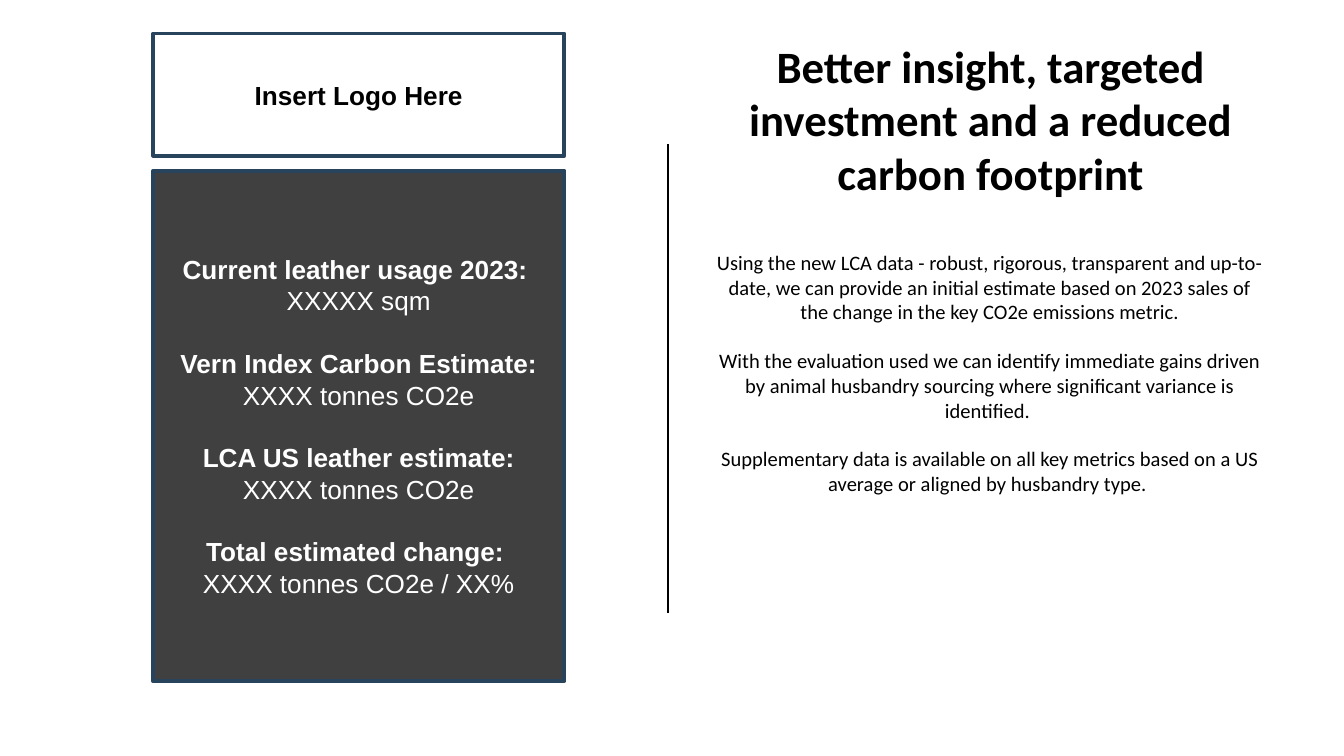
from lxml.etree import SubElement
from pptx import Presentation
from pptx.dml.color import RGBColor
from pptx.enum.shapes import MSO_CONNECTOR, MSO_SHAPE
from pptx.enum.text import MSO_ANCHOR, PP_ALIGN
from pptx.oxml.ns import qn
from pptx.util import Inches, Pt

TITLE = "Better insight, targeted investment and a reduced carbon footprint"
BODY = [
    "Using the new LCA data - robust, rigorous, transparent and up-to-date, we can provide an initial "
    "estimate based on 2023 sales of the change in the key CO2e emissions metric.",
    "With the evaluation used we can identify immediate gains driven by animal husbandry sourcing "
    "where significant variance is identified. ",
    "Supplementary data is available on all key metrics based on a US average or aligned by husbandry type. ",
]
LOGO_LABEL = "Insert Logo Here"
METRICS = [
    ("Current leather usage 2023: ", "XXXXX sqm"),
    ("Vern Index Carbon Estimate:", "XXXX tonnes CO2e"),
    ("LCA US leather estimate:", "XXXX tonnes CO2e"),
    ("Total estimated change: ", "XXXX tonnes CO2e / XX%"),
]
COLORS = {"ink": "000000", "paper": "FFFFFF", "panel": "404040", "border": "28445D"}

SLIDE_W = 10
SLIDE_H = SLIDE_W * 9 / 16
PANEL_X, PANEL_W = 1.14, 3.06
LOGO_Y, LOGO_H = 0.25, 0.91
PANEL_Y, PANEL_H = LOGO_Y + LOGO_H + 0.11, 3.8
DIVIDER_X = 4.97


def color(name):
    return RGBColor.from_string(COLORS[name])


def write(s, lines, font, ink):
    tf = s.text_frame
    tf.word_wrap = True
    tf.vertical_anchor = MSO_ANCHOR.MIDDLE
    for i, (text, size, bold, gap) in enumerate(lines):
        p = tf.paragraphs[0] if i == 0 else tf.add_paragraph()
        p.text = text
        p.alignment = PP_ALIGN.CENTER
        if i and gap:
            p.space_before = Pt(gap)
        p.font.name, p.font.size, p.font.bold = font, Pt(size), bold
        p.font.color.rgb = color(ink)


def add_text(x, y, w, h, lines):
    s = slide.shapes.add_textbox(Inches(x), Inches(y), Inches(w), Inches(h))
    tf = s.text_frame
    tf.margin_left = tf.margin_right = Inches(0.07)
    tf.margin_top = tf.margin_bottom = Inches(0.04)
    write(s, lines, "Calibri", "ink")


def add_panel(y, h, fill, ink, lines):
    s = slide.shapes.add_shape(
        MSO_SHAPE.RECTANGLE, Inches(PANEL_X), Inches(y), Inches(PANEL_W), Inches(h))
    s.shadow.inherit = False
    s.fill.solid()
    s.fill.fore_color.rgb = color(fill)
    s.line.color.rgb = color("border")
    s.line.width = Pt(2)
    write(s, lines, "Arial", ink)


prs = Presentation()
prs.slide_width, prs.slide_height = Inches(SLIDE_W), Inches(SLIDE_H)
slide = prs.slides.add_slide(prs.slide_layouts[6])

divider = slide.shapes.add_connector(
    MSO_CONNECTOR.STRAIGHT, Inches(DIVIDER_X), Inches(1.07), Inches(DIVIDER_X), Inches(4.56))
divider.line.color.rgb = color("ink")
divider.line.width = Pt(0.75)
SubElement(divider._element.spPr, qn("a:effectLst"))

add_text(5.24, 1.81, 4.25, 1.93, [(text, 11, False, 13) for text in BODY])
add_text(5.03, 0.24, 4.68, 1.29, [(TITLE, 24, True, 0)])

metric_lines = [line for label, value in METRICS
                for line in ((label, 14, True, 16.8), (value, 14, False, 0))]
add_panel(PANEL_Y, PANEL_H, "panel", "paper", metric_lines)
add_panel(LOGO_Y, LOGO_H, "paper", "ink", [(LOGO_LABEL, 14, True, 0)])

prs.save("out.pptx")
